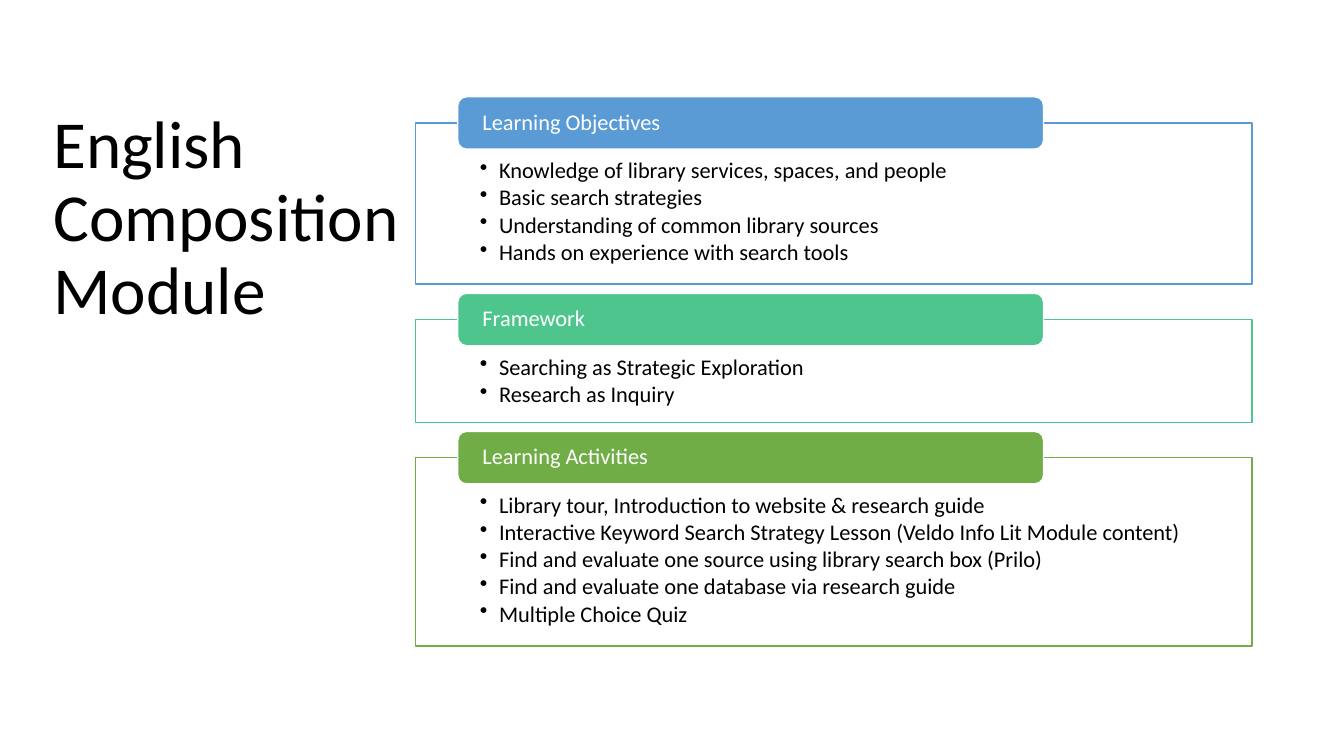
import dataclasses

import lxml.etree
import pptx
import pptx.dml.color
import pptx.enum.shapes
import pptx.enum.text
import pptx.oxml.ns
import pptx.shapes.autoshape
import pptx.slide
import pptx.text.text
import pptx.util

EMU_PER_PX = 9144
FONT = "Calibri"
COLORS = {
    "text": "000000",
    "paper": "FFFFFF",
    "objectives": "5B9BD5",
    "framework": "4DC58D",
    "activities": "70AD47",
}

PANEL_LEFT, PANEL_WIDTH = 412, 830
FIRST_PANEL_TOP, PANEL_GAP = 122, 35
TAB_LEFT, TAB_WIDTH, TAB_HEIGHT = 454, 581, 52
BULLET_INDENT = 19


@dataclasses.dataclass(frozen=True)
class Section:
    heading: str
    color: str
    height: int
    points: tuple[str, ...]


SECTIONS = (
    Section("Learning Objectives", "objectives", 160, (
        "Knowledge of library services, spaces, and people",
        "Basic search strategies",
        "Understanding of common library sources",
        "Hands on experience with search tools",
    )),
    Section("Framework", "framework", 102, (
        "Searching as Strategic Exploration",
        "Research as Inquiry",
    )),
    Section("Learning Activities", "activities", 187, (
        "Library tour, Introduction to website & research guide",
        "Interactive Keyword Search Strategy Lesson (Veldo Info Lit Module content)",
        "Find and evaluate one source using library search box (Prilo)",
        "Find and evaluate one database via research guide",
        "Multiple Choice Quiz",
    )),
)


def px(length: int) -> pptx.util.Emu:
    return pptx.util.Emu(length * EMU_PER_PX)


def rgb(color: str) -> pptx.dml.color.RGBColor:
    return pptx.dml.color.RGBColor.from_string(COLORS[color])


def set_text(frame: pptx.text.text.TextFrame, text: str, size: int, color: str,
             anchor: pptx.enum.text.MSO_ANCHOR,
             insets: tuple[int, int, int, int]) -> None:
    """Fill a frame, one paragraph a line; insets run left, top, right, bottom."""
    frame.text = text
    frame.word_wrap = True
    frame.vertical_anchor = anchor
    (frame.margin_left, frame.margin_top,
     frame.margin_right, frame.margin_bottom) = map(px, insets)
    for paragraph in frame.paragraphs:
        paragraph.alignment = pptx.enum.text.PP_ALIGN.LEFT
        paragraph.line_spacing = 0.9
        for run in paragraph.runs:
            run.font.name = FONT
            run.font.size = pptx.util.Pt(size)
            run.font.color.rgb = rgb(color)


def add_bullet(paragraph: pptx.text.text._Paragraph) -> None:
    paragraph.space_after = pptx.util.Pt(2.2)
    properties = paragraph._p.get_or_add_pPr()
    properties.set("marL", str(px(BULLET_INDENT)))
    properties.set("indent", str(-px(BULLET_INDENT)))
    bullet = lxml.etree.SubElement(properties, pptx.oxml.ns.qn("a:buChar"))
    bullet.set("char", "•")


def add_box(slide: pptx.slide.Slide, kind: pptx.enum.shapes.MSO_SHAPE,
            left: int, top: int, width: int, height: int,
            fill: str, line: str) -> pptx.shapes.autoshape.Shape:
    box = slide.shapes.add_shape(kind, px(left), px(top), px(width), px(height))
    box.shadow.inherit = False
    box.fill.solid()
    box.fill.fore_color.rgb = rgb(fill)
    box.line.color.rgb = rgb(line)
    box.line.width = pptx.util.Pt(1)
    return box


def add_title(slide: pptx.slide.Slide) -> None:
    title = slide.shapes.add_textbox(px(43), px(61), px(369), px(314))
    set_text(title.text_frame, "English Composition Module", 48, "text",
             pptx.enum.text.MSO_ANCHOR.MIDDLE, (10, 5, 10, 5))


def add_section(slide: pptx.slide.Slide, section: Section, top: int) -> None:
    panel = add_box(slide, pptx.enum.shapes.MSO_SHAPE.RECTANGLE,
                    PANEL_LEFT, top, PANEL_WIDTH, section.height,
                    "paper", section.color)
    set_text(panel.text_frame, "\n".join(section.points), 16, "text",
             pptx.enum.text.MSO_ANCHOR.TOP, (64, 36, 64, 12))
    for paragraph in panel.text_frame.paragraphs:
        add_bullet(paragraph)

    tab = add_box(slide, pptx.enum.shapes.MSO_SHAPE.ROUNDED_RECTANGLE,
                  TAB_LEFT, top - TAB_HEIGHT // 2, TAB_WIDTH, TAB_HEIGHT,
                  section.color, "paper")
    set_text(tab.text_frame, section.heading, 16, "paper",
             pptx.enum.text.MSO_ANCHOR.MIDDLE, (22, 0, 22, 0))


def main() -> None:
    presentation = pptx.Presentation()
    presentation.slide_width = px(1333)
    presentation.slide_height = px(750)
    slide = presentation.slides.add_slide(presentation.slide_layouts[6])
    add_title(slide)
    top = FIRST_PANEL_TOP
    for section in SECTIONS:
        add_section(slide, section, top)
        top += section.height + PANEL_GAP
    presentation.save("out.pptx")


if __name__ == "__main__":
    main()
